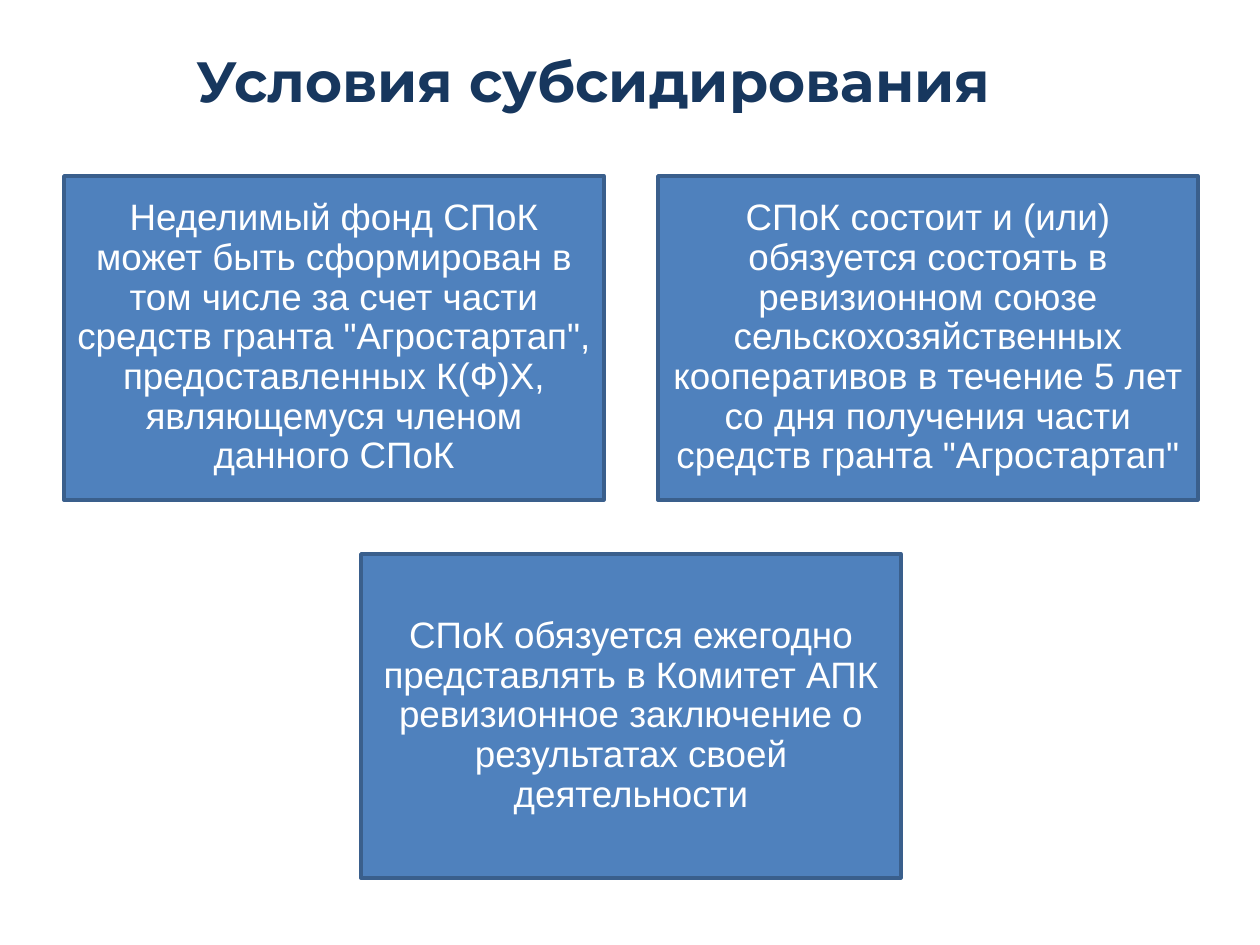
from dataclasses import dataclass

from pptx import Presentation
from pptx.dml.color import RGBColor
from pptx.enum.shapes import MSO_SHAPE
from pptx.enum.text import MSO_ANCHOR, MSO_AUTO_SIZE, PP_ALIGN
from pptx.util import Pt

EMU_PER_PX = 914400 // 126
RECT = MSO_SHAPE.RECTANGLE
MIDDLE = MSO_ANCHOR.MIDDLE
CENTER = PP_ALIGN.CENTER
NO_AUTOFIT = MSO_AUTO_SIZE.NONE
TITLE_ONLY = 5


def px(n):
    return n * EMU_PER_PX


@dataclass(frozen=True)
class Theme:
    title_color: RGBColor = RGBColor(0x17, 0x37, 0x5E)
    card_fill: RGBColor = RGBColor(0x4F, 0x81, 0xBD)
    card_line: RGBColor = RGBColor(0x3A, 0x5F, 0x8C)
    card_text: RGBColor = RGBColor(0xFF, 0xFF, 0xFF)
    title_font: str = "Montserrat"
    body_font: str = "Arial"
    title_size: float = 32.4
    body_size: float = 21
    line_width: float = 2


class SlideBuilder:
    def __init__(self, slide, theme):
        self.slide = slide
        self.theme = theme

    def _write(self, tf, text, font, size, color, bold=False):
        tf.word_wrap = True
        tf.auto_size = NO_AUTOFIT
        tf.vertical_anchor = MIDDLE
        p = tf.paragraphs[0]
        p.text = text
        p.alignment = CENTER
        p.font.name = font
        p.font.size = Pt(size)
        p.font.bold = bold
        p.font.color.rgb = color
        return p

    def title(self, text, x, y, w, h):
        t = self.theme
        sp = self.slide.shapes.title
        sp.left, sp.top, sp.width, sp.height = map(px, (x, y, w, h))
        self._write(sp.text_frame, text, t.title_font, t.title_size,
                    t.title_color, bold=True)

    def card(self, text, x, y, w, h, inset=11):
        t = self.theme
        sp = self.slide.shapes.add_shape(RECT, *map(px, (x, y, w, h)))
        sp.shadow.inherit = False
        sp.fill.solid()
        sp.fill.fore_color.rgb = t.card_fill
        sp.line.color.rgb = t.card_line
        sp.line.width = Pt(t.line_width)
        tf = sp.text_frame
        tf.margin_left = tf.margin_right = px(inset)
        tf.margin_top = tf.margin_bottom = px(inset)
        p = self._write(tf, text, t.body_font, t.body_size, t.card_text)
        p.line_spacing = 0.9


CONDITIONS = [
    'Неделимый фонд СПоК может быть сформирован в том числе за счет части '
    'средств гранта "Агростартап", предоставленных К(Ф)Х, являющемуся членом '
    'данного СПоК',
    'СПоК состоит и (или) обязуется состоять в ревизионном союзе '
    'сельскохозяйственных кооперативов в течение 5 лет со дня получения части '
    'средств гранта "Агростартап"',
    'СПоК обязуется ежегодно представлять в Комитет АПК ревизионное '
    'заключение о результатах своей деятельности',
]


def main():
    prs = Presentation()
    prs.slide_width, prs.slide_height = px(1260), px(945)
    slide = prs.slides.add_slide(prs.slide_layouts[TITLE_ONLY])
    builder = SlideBuilder(slide, Theme())
    builder.title("Условия субсидирования", 58, 45, 1071, 69)

    left, top, width, height, gap = 64, 176, 540, 324, 54
    step_x, step_y = width + gap, height + gap
    # Two cards on top, the third centred below them
    cells = [(0, 0), (step_x, 0), (step_x // 2, step_y)]
    for text, (dx, dy) in zip(CONDITIONS, cells):
        builder.card(text, left + dx, top + dy, width, height)

    prs.save("out.pptx")


if __name__ == "__main__":
    main()
